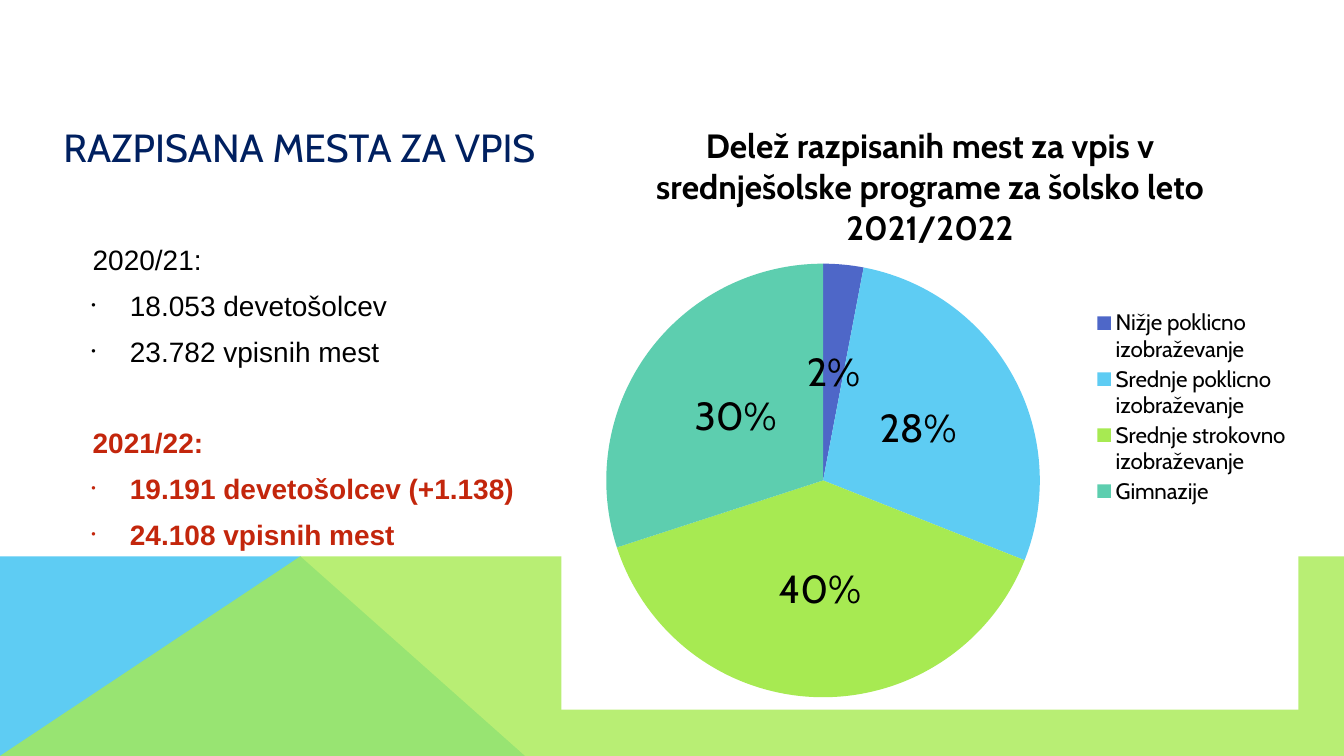
from dataclasses import dataclass

from lxml.etree import SubElement
from pptx import Presentation
from pptx.chart.data import CategoryChartData
from pptx.dml.color import RGBColor
from pptx.enum.chart import XL_CHART_TYPE, XL_LABEL_POSITION, XL_LEGEND_POSITION
from pptx.enum.text import MSO_ANCHOR, MSO_AUTO_SIZE, PP_ALIGN
from pptx.oxml import parse_xml
from pptx.oxml.ns import nsdecls, qn
from pptx.util import Cm, Pt


@dataclass(frozen=True)
class Theme:
    head: str = "Cabin"
    body: str = "Arial"
    white: str = "FFFFFF"
    black: str = "000000"
    navy: str = "002060"
    red: str = "C3260C"
    sky: str = "5ECCF3"
    lime: str = "A7EA52"
    blue: str = "4E67C8"
    mint: str = "5DCEAF"
    title: int = 28
    text: int = 20
    chart: int = 24
    label: int = 28
    key: int = 16


THEME = Theme()
WIDE, HIGH = 33.87, 19.05
RIDGE = 14.02

GROUPS = [
    ("2020/21:", ["18.053 devetošolcev", "23.782 vpisnih mest"], THEME.black, False),
    ("2021/22:", ["19.191 devetošolcev (+1.138)", "24.108 vpisnih mest"], THEME.red, True),
]
SHARES = [
    ("Nižje poklicno izobraževanje", 3, THEME.blue),
    ("Srednje poklicno izobraževanje", 28, THEME.sky),
    ("Srednje strokovno izobraževanje", 39, THEME.lime),
    ("Gimnazije", 30, THEME.mint),
]
LABELS = {0: "2%", 2: "40%"}


def apply(item, **values):
    for name, value in values.items():
        setattr(item, name, value)


def style(font, name, size, color, bold=False):
    apply(font, name=name, size=Pt(size), bold=bold)
    font.color.rgb = RGBColor.from_string(color)


def place(shape, left, top, width, height):
    apply(shape, left=Cm(left), top=Cm(top), width=Cm(width), height=Cm(height))


def add_hill(slide, points, color, alpha=100):
    start, *rest = [(Cm(x), Cm(y)) for x, y in points]
    maker = slide.shapes.build_freeform(*start)
    maker.add_line_segments(rest, close=True)
    hill = maker.convert_to_shape()
    hill.shadow.inherit = False
    hill.line.fill.background()
    hill.fill.solid()
    hill.fill.fore_color.rgb = RGBColor.from_string(color)
    if alpha < 100:
        tint = hill.element.spPr.find(".//" + qn("a:srgbClr"))
        SubElement(tint, qn("a:alpha"), val=str(alpha * 1000))
    slide.shapes.title.element.addprevious(hill.element)


def add_title(slide, text):
    title = slide.shapes.title
    place(title, 1.6, 2.49, 12.85, 2.34)
    frame = title.text_frame
    apply(frame, text=text, word_wrap=True, auto_size=MSO_AUTO_SIZE.NONE,
          vertical_anchor=MSO_ANCHOR.MIDDLE, margin_left=0, margin_right=0,
          margin_top=Cm(0.1), margin_bottom=0)
    line = frame.paragraphs[0]
    line.alignment = PP_ALIGN.LEFT
    style(line.runs[0].font, THEME.head, THEME.title, THEME.navy)


def add_line(line, text, color, bold, before, dot):
    apply(line, text=text, alignment=PP_ALIGN.LEFT,
          space_before=Pt(before), line_spacing=1.04)
    style(line.runs[0].font, THEME.body, THEME.text, color, bold)
    form = line._p.get_or_add_pPr()
    left, hang = (1.22, -0.97) if dot else (0.28, 0)
    form.set("marL", str(Cm(left)))
    form.set("indent", str(Cm(hang)))
    if dot:
        SubElement(form, qn("a:buSzPct"), val="45000")
        SubElement(form, qn("a:buChar"), char="•")
    else:
        SubElement(form, qn("a:buNone"))


def add_list(slide, groups):
    body = slide.placeholders[1]
    place(body, 1.8, 5.94, 11.6, 8.84)
    frame = body.text_frame
    apply(frame, word_wrap=True, auto_size=MSO_AUTO_SIZE.NONE,
          vertical_anchor=MSO_ANCHOR.TOP)
    line = frame.paragraphs[0]
    for rank, (head, items, color, bold) in enumerate(groups):
        if rank:
            line = frame.add_paragraph()
        add_line(line, head, color, bold, 40 if rank else 8, False)
        for item in items:
            add_line(frame.add_paragraph(), item, color, bold, 8, True)


def set_layout(owner, inner=False, **sizes):
    layout = owner.find(qn("c:layout"))
    if layout is None:
        layout = parse_xml(f"<c:layout {nsdecls('c')}/>")
        if inner:
            owner.insert(0, layout)
        else:
            owner.find(qn("c:legendPos")).addnext(layout)
    box = SubElement(layout, qn("c:manualLayout"))
    if inner:
        SubElement(box, qn("c:layoutTarget"), val="inner")
    for side in ("xMode", "yMode"):
        SubElement(box, qn("c:" + side), val="edge")
    for side, value in sizes.items():
        SubElement(box, qn("c:" + side), val=str(value))


def add_pie(slide, title, shares):
    data = CategoryChartData()
    data.categories = [name for name, _, _ in shares]
    data.add_series("Series 1", [value for _, value, _ in shares])
    spot = Cm(14.15), Cm(2.49), Cm(18.57), Cm(15.39)
    chart = slide.shapes.add_chart(XL_CHART_TYPE.PIE, *spot, data).chart
    style(chart.font, THEME.head, 10, THEME.black)
    chart.element.find(qn("c:chart")).addnext(parse_xml(
        f"<c:spPr {nsdecls('c', 'a')}><a:solidFill><a:srgbClr val='{THEME.white}'/>"
        "</a:solidFill><a:ln><a:noFill/></a:ln></c:spPr>"))

    apply(chart, has_title=True, has_legend=True)
    frame = chart.chart_title.text_frame
    frame.text = title
    style(frame.paragraphs[0].runs[0].font, THEME.head, THEME.chart, THEME.black, True)

    legend = chart.legend
    apply(legend, position=XL_LEGEND_POSITION.RIGHT, include_in_layout=False)
    style(legend.font, THEME.head, THEME.key, THEME.black)
    set_layout(legend._element, x=0.72, y=0.34, w=0.27, h=0.33)

    plot = chart.plots[0]
    apply(plot, vary_by_categories=True, has_data_labels=True)
    set_layout(chart.element.find(".//" + qn("c:plotArea")), inner=True,
               x=0.06, y=0.27, w=0.59, h=0.71)
    series = plot.series[0]
    labels = series.data_labels
    apply(labels, show_percentage=True, show_value=False,
          position=XL_LABEL_POSITION.CENTER)
    style(labels.font, THEME.head, THEME.label, THEME.black)
    for rank, (_, _, color) in enumerate(shares):
        fill = series.points[rank].format.fill
        fill.solid()
        fill.fore_color.rgb = RGBColor.from_string(color)
    for rank, text in LABELS.items():
        label = series.points[rank].data_label
        label.text_frame.text = text
        style(label.text_frame.paragraphs[0].runs[0].font,
              THEME.head, THEME.label, THEME.black)
        label.position = XL_LABEL_POSITION.CENTER


def main():
    deck = Presentation()
    apply(deck, slide_width=Cm(WIDE), slide_height=Cm(HIGH))
    slide = deck.slides.add_slide(deck.slide_layouts[1])
    add_hill(slide, [(0, HIGH), (0, RIDGE), (7.57, RIDGE), (13.23, HIGH)], THEME.sky)
    add_hill(slide, [(0, HIGH), (7.57, RIDGE), (WIDE, RIDGE), (WIDE, HIGH)],
             THEME.lime, 80)
    add_title(slide, "RAZPISANA MESTA ZA VPIS")
    add_list(slide, GROUPS)
    add_pie(slide, "Delež razpisanih mest za vpis v srednješolske programe "
                   "za šolsko leto 2021/2022", SHARES)
    deck.save("out.pptx")


if __name__ == "__main__":
    main()
